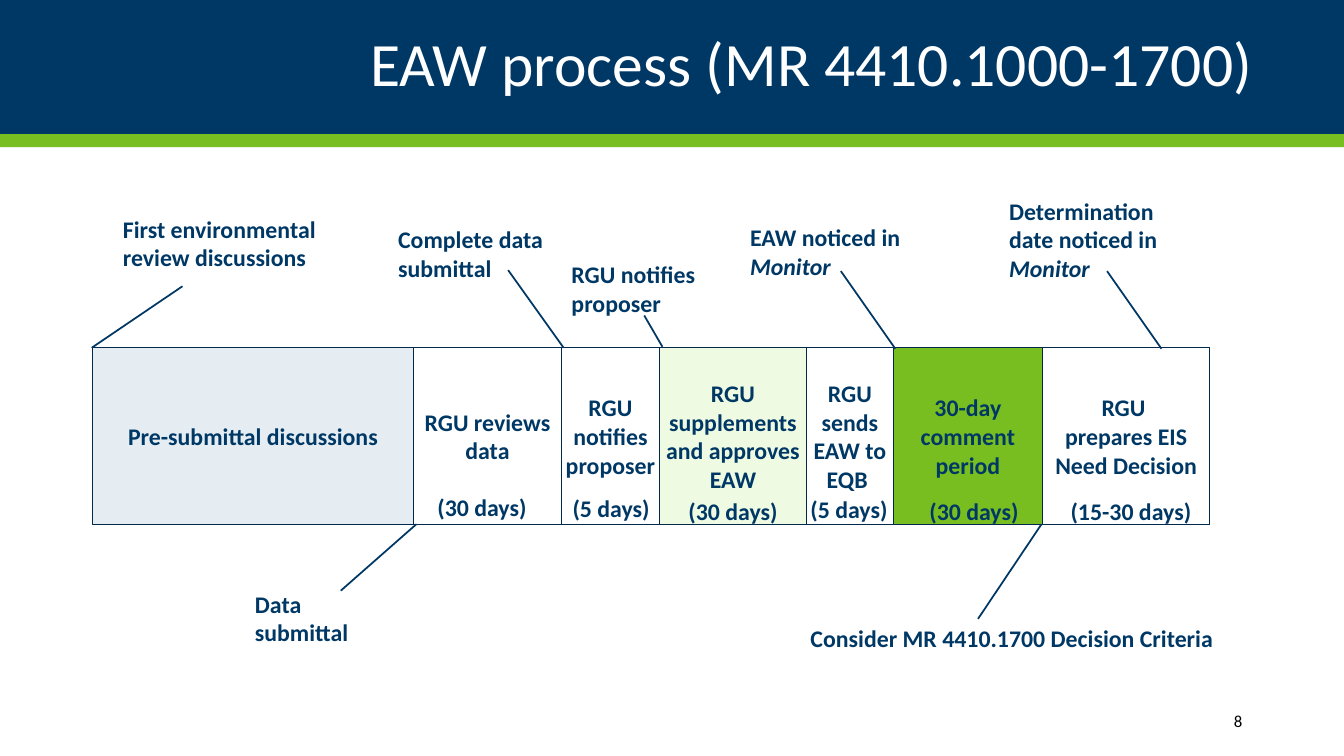
from itertools import accumulate
from typing import NamedTuple

from lxml.etree import SubElement
from pptx import Presentation
from pptx.dml.color import RGBColor
from pptx.enum.shapes import MSO_CONNECTOR as Connector, MSO_SHAPE as Shape
from pptx.enum.text import MSO_ANCHOR as Anchor, MSO_AUTO_SIZE as AutoSize, PP_ALIGN as Align
from pptx.oxml.ns import qn
from pptx.util import Inches, Pt

NAVY = RGBColor(0x00, 0x38, 0x65)
OUTLINE = RGBColor(0x00, 0x29, 0x4B)
BLUE = RGBColor(0x00, 0x4F, 0x8E)
GREEN = RGBColor(0x78, 0xBE, 0x21)
PALE_GREEN = RGBColor(0xE4, 0xF7, 0xCE)
WHITE = RGBColor(0xFF, 0xFF, 0xFF)
BLACK = RGBColor(0x00, 0x00, 0x00)

LABEL_FONT = {"name": "Calibri", "size": Pt(17), "bold": True}


class Step(NamedTuple):
    """A stage of the process; days is its text, left, top and width in the stage."""

    text: str
    width: float
    fill: RGBColor | None = None
    opacity: int = 100
    inset: float = 0
    days: tuple | None = None


class Callout(NamedTuple):
    """A note with its box and leader line, all measured from the timeline's corner."""

    text: str
    italic: str
    box: tuple
    start: tuple
    end: tuple


STEPS = [
    Step("Pre-submittal discussions", 3.18, BLUE, 10, 0.1),
    Step("RGU reviews data", 1.47, days=("(30 days)", 0.14, 1.39, 1.14)),
    Step("RGU notifies proposer", 0.97, days=("(5 days)", 0.01, 1.4, 1.09)),
    Step("RGU supplements and approves\nEAW", 1.46, PALE_GREEN, 58,
         days=("(30 days)", 0.19, 1.43, 1.19)),
    Step("RGU sends EAW to EQB ", 0.86, days=("(5 days)", -0.06, 1.41, 1.04)),
    Step("30-day comment period", 1.48, GREEN, inset=0.1,
         days=("(30 days)", 0.26, 1.43, 1.16)),
    Step("RGU \vprepares EIS Need Decision", 1.66, days=("(15-30 days)", 0.18, 1.43, 1.43)),
]

CALLOUTS = [
    Callout("First environmental review discussions", "",
            (0.2, -1.37, 2.52, 0.67), (0.89, -0.61), (-0.01, 0)),
    Callout("Complete data submittal", "",
            (2.93, -1.27, 2.42, 0.67), (4.12, -0.77), (4.67, 0)),
    Callout("RGU notifies proposer", "",
            (4.65, -0.92, 1.54, 0.67), (5.47, -0.32), (5.65, -0.01)),
    Callout("EAW noticed in ", "Monitor",
            (6.42, -1.29, 1.88, 0.67), (7.42, -0.76), (7.96, 0.01)),
    Callout("Determination date noticed in ", "Monitor",
            (8.99, -1.55, 1.92, 0.96), (10.06, -0.76), (10.6, 0.01)),
    Callout("Data submittal", "",
            (1.51, 2.35, 1.58, 0.67), (2.46, 2.41), (3.21, 1.75)),
    Callout("Consider MR 4410.1700 Decision Criteria", "",
            (7.02, 2.69, 4.39, 0.39), (8.78, 2.69), (9.41, 1.75)),
]


def inches(values):
    """Turn a sequence of numbers into lengths."""
    return [Inches(value) for value in values]


def format_font(font, color, values):
    """Set a font's colour and its attributes."""
    font.color.rgb = color
    for name, value in values.items():
        setattr(font, name, value)


def format_frame(frame, values):
    """Set the attributes of a text frame."""
    for name, value in values.items():
        setattr(frame, name, value)


def format_paragraphs(frame, align, color, font):
    """Align every paragraph and format its runs."""
    for paragraph in frame.paragraphs:
        paragraph.alignment = align
        for run in paragraph.runs:
            format_font(run.font, color, font)


def add_label(slide, box, text, italic="", color=NAVY, font=LABEL_FONT,
              align=Align.LEFT, anchor=Anchor.TOP):
    """Add a wrapping text box, with an optional italic ending."""
    frame = slide.shapes.add_textbox(*inches(box)).text_frame
    format_frame(frame, {"word_wrap": True, "vertical_anchor": anchor})
    frame.text = text
    if italic:
        frame.paragraphs[0].add_run().text = italic
    format_paragraphs(frame, align, color, font)
    if italic:
        frame.paragraphs[0].runs[-1].font.italic = True


def add_box(slide, kind, box, fill=None, opacity=100):
    """Add a shape without shadow or line, filled if a colour is given."""
    shape = slide.shapes.add_shape(kind, *inches(box))
    shape.shadow.inherit = False
    shape.line.fill.background()
    if fill is None:
        shape.fill.background()
        return shape
    shape.fill.solid()
    shape.fill.fore_color.rgb = fill
    if opacity < 100:
        color = shape.fill._xPr.find(qn("a:solidFill"))[0]
        SubElement(color, qn("a:alpha"), val=str(opacity * 1000))
    return shape


def add_header(slide, box, text):
    """Fill the box with the title and draw the green stripe below it."""
    left, top, width, height = box
    add_box(slide, Shape.RECTANGLE, (left, top + height, width, 0.13), GREEN)
    title = slide.shapes.title
    title.left, title.top, title.width, title.height = inches(box)
    title.fill.solid()
    title.fill.fore_color.rgb = NAVY
    frame = title.text_frame
    frame.text = text
    format_frame(frame, {
        "auto_size": AutoSize.NONE, "word_wrap": True, "vertical_anchor": Anchor.MIDDLE,
        "margin_left": Inches(0.9), "margin_right": Inches(0.9),
        "margin_top": Inches(0.05), "margin_bottom": Inches(0.05)})
    frame.paragraphs[0].line_spacing = 0.9
    format_paragraphs(frame, Align.RIGHT, WHITE, {"name": "Calibri", "size": Pt(44)})


def add_step(slide, box, step):
    """Draw one stage of the process and its duration."""
    left, top = box[:2]
    shape = add_box(slide, Shape.FLOWCHART_PROCESS, box, step.fill, step.opacity)
    shape.line.color.rgb = OUTLINE
    shape.line.width = Pt(0.85)
    frame = shape.text_frame
    frame.text = step.text
    margin = Inches(step.inset)
    format_frame(frame, {
        "word_wrap": True, "vertical_anchor": Anchor.MIDDLE, "margin_left": margin,
        "margin_right": margin, "margin_top": margin // 2, "margin_bottom": margin // 2})
    format_paragraphs(frame, Align.CENTER, NAVY, LABEL_FONT)
    if step.days:
        text, across, down, width = step.days
        add_label(slide, (left + across, top + down, width, 0.39), text)


def add_callout(slide, corner, callout):
    """Write a note and draw its leader line to the timeline."""
    left, top = corner
    across, down, width, height = callout.box
    add_label(slide, (left + across, top + down, width, height), callout.text, callout.italic)
    ends = [base + offset for point in (callout.start, callout.end)
            for base, offset in zip(corner, point)]
    leader = slide.shapes.add_connector(Connector.STRAIGHT, *inches(ends))
    leader.line.color.rgb = NAVY
    leader.line.width = Pt(1.25)
    SubElement(leader._element.spPr, qn("a:effectLst"))


def add_timeline(slide, box):
    """Set the stages side by side in the box, with callouts around them."""
    left, top, _, height = box
    lefts = accumulate((step.width for step in STEPS), initial=left)
    for step, step_left in zip(STEPS, lefts):
        add_step(slide, (step_left, top, step.width, height), step)
    for callout in CALLOUTS:
        add_callout(slide, (left, top), callout)


def main():
    """Build the slide and save it."""
    presentation = Presentation()
    presentation.slide_width, presentation.slide_height = inches((13.33, 7.5))
    slide = presentation.slides.add_slide(presentation.slide_layouts[5])
    add_header(slide, (0, 0, 13.33, 1.33), "EAW process (MR 4410.1000-1700)")
    add_timeline(slide, (0.92, 3.45, 11.08, 1.75))
    add_label(slide, (10.82, 6.95, 1.6, 0.4), "8", color=BLACK, align=Align.RIGHT,
              font={"name": "Calibri", "size": Pt(12)}, anchor=Anchor.MIDDLE)
    presentation.save("out.pptx")


if __name__ == "__main__":
    main()
